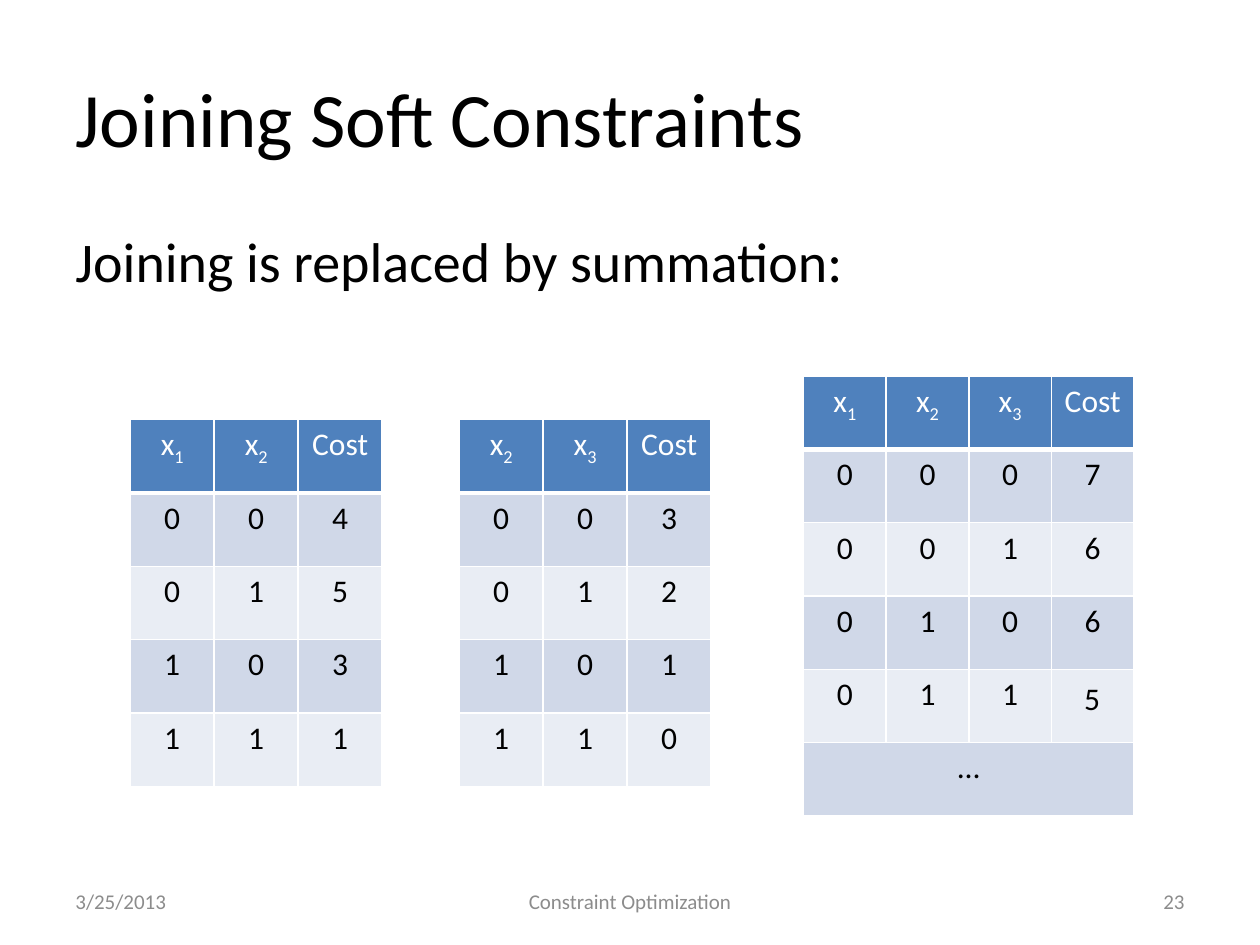
from dataclasses import dataclass

from lxml.etree import SubElement
from pptx import Presentation
from pptx.dml.color import RGBColor as Rgb
from pptx.enum.text import MSO_ANCHOR as Anchor, PP_ALIGN as Align
from pptx.oxml.ns import qn
from pptx.util import Pt

FONT = "Calibri"
HEX = {
    "black": "000000",
    "white": "FFFFFF",
    "gray": "8C8C8C",
    "head": "4F81BD",
    "odd": "D0D8E8",
    "even": "E9EDF4",
}
ROW = 41.9


@dataclass
class Label:
    text: str
    left: float
    top: float
    width: float
    height: float
    size: float = 12
    color: str = "gray"
    align: Align = Align.LEFT
    anchor: Anchor = Anchor.MIDDLE
    wrap: bool = True


@dataclass
class Grid:
    left: float
    top: float
    col: float
    rows: list[str]


LABELS = [
    Label("Joining Soft Constraints", 36, 21.6, 648, 90, 44, "black"),
    Label("Joining is replaced by summation:", 36, 126, 648, 356.4, 32, "black",
          anchor=Anchor.TOP),
    Label("3/25/2013", 36, 500.5, 168, 28.75),
    Label("Constraint Optimization", 246, 500.5, 228, 28.75, align=Align.CENTER),
    Label("23", 516, 500.5, 168, 28.75, align=Align.RIGHT),
]
# Stands over the empty last cell of the joined table
LAST = Label("5", 612.5, 384.5, 23.8, 29.1, 18, "black", anchor=Anchor.TOP,
             wrap=False)
GRIDS = [
    Grid(74.4, 239.8, 48, ["x_1 x_2 Cost", "0 0 4", "0 1 5", "1 0 3", "1 1 1"]),
    Grid(262.4, 239.8, 48, ["x_2 x_3 Cost", "0 0 3", "0 1 2", "1 0 1", "1 1 0"]),
    Grid(459.2, 214.9, 47.2, ["x_1 x_2 x_3 Cost", "0 0 0 7", "0 0 1 6",
                              "0 1 0 6", "0 1 1", "…"]),
]


def write(frame, text: str, *, size: float, color: str, align: Align) -> None:
    """Fill the frame with one line; what follows "_" is a subscript."""
    para = frame.paragraphs[0]
    para.alignment = align
    for i, part in enumerate(text.split("_")):
        run = para.add_run()
        run.text = part
        run.font.name = FONT
        run.font.size = Pt(size)
        run.font.color.rgb = Rgb.from_string(HEX[color])
        if i:
            run._r.get_or_add_rPr().set("baseline", "-25000")


def add_label(slide, label: Label) -> None:
    box = slide.shapes.add_textbox(Pt(label.left), Pt(label.top),
                                   Pt(label.width), Pt(label.height))
    frame = box.text_frame
    frame.word_wrap = label.wrap
    frame.vertical_anchor = label.anchor
    write(frame, label.text, size=label.size, color=label.color,
          align=label.align)


def edge(cell, base: float) -> None:
    """Draw white cell borders; base is the width of the bottom one."""
    props = cell._tc.get_or_add_tcPr()
    for side, width in zip("LRTB", (1, 1, 1, base)):
        line = SubElement(props, qn(f"a:ln{side}"), w=str(Pt(width)))
        fill = SubElement(line, qn("a:solidFill"))
        SubElement(fill, qn("a:srgbClr"), val=HEX["white"])


def add_grid(slide, grid: Grid) -> None:
    count = len(grid.rows[0].split())
    table = slide.shapes.add_table(
        len(grid.rows), count, Pt(grid.left), Pt(grid.top),
        Pt(grid.col * count), Pt(ROW * len(grid.rows))).table
    for col in table.columns:
        col.width = Pt(grid.col)
    for r, line in enumerate(grid.rows):
        table.rows[r].height = Pt(ROW)
        words = line.split()
        if len(words) == 1:
            table.cell(r, 0).merge(table.cell(r, count - 1))
        shade = "head" if r == 0 else "odd" if r % 2 else "even"
        for c in range(count):
            cell = table.cell(r, c)
            edge(cell, 1 if r else 3)
            cell.fill.solid()
            cell.fill.fore_color.rgb = Rgb.from_string(HEX[shade])
            if c < len(words):
                write(cell.text_frame, words[c], size=18,
                      color="black" if r else "white", align=Align.CENTER)


def main() -> None:
    deck = Presentation()
    deck.slide_width, deck.slide_height = Pt(720), Pt(540)
    slide = deck.slides.add_slide(deck.slide_layouts[6])
    for label in LABELS:
        add_label(slide, label)
    for grid in GRIDS:
        add_grid(slide, grid)
    add_label(slide, LAST)
    deck.save("out.pptx")


if __name__ == "__main__":
    main()
